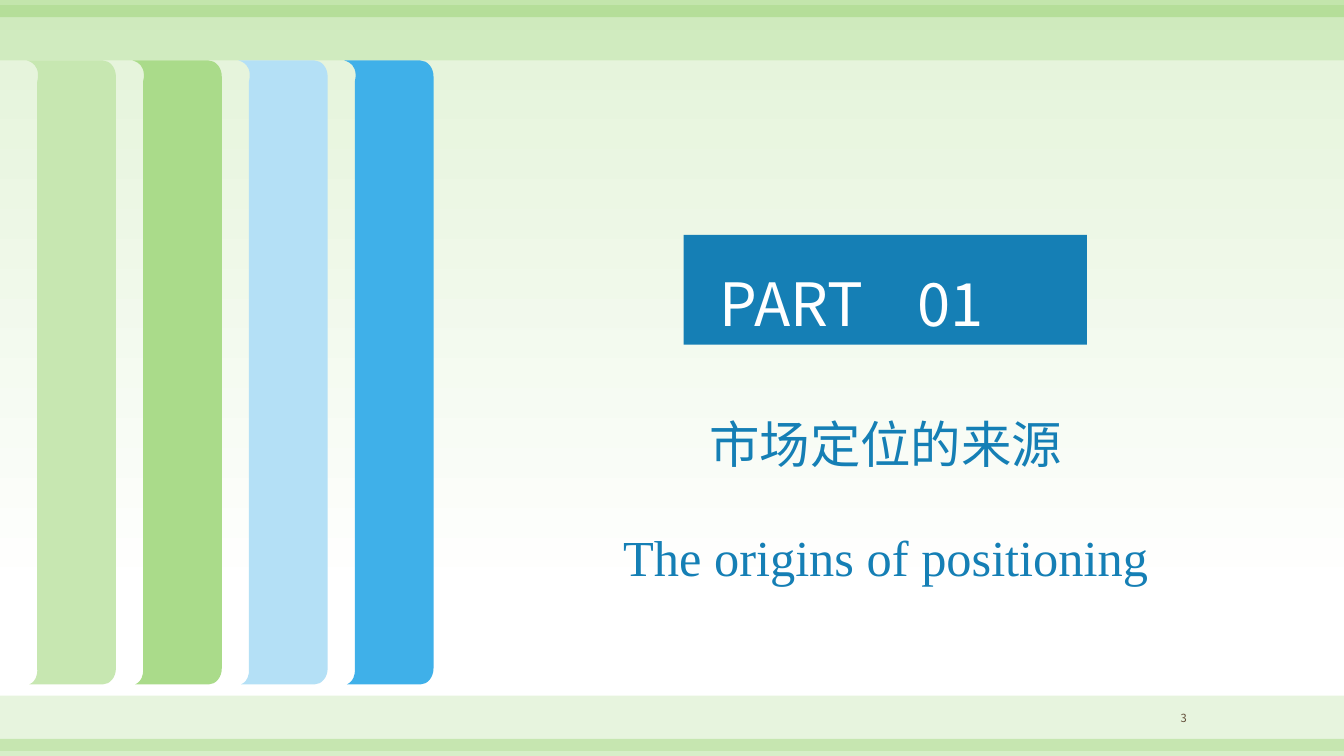
from pptx import Presentation
from pptx.dml.color import RGBColor
from pptx.enum.shapes import MSO_SHAPE as Shape
from pptx.enum.text import MSO_ANCHOR as Anchor, PP_ALIGN as Align
from pptx.oxml.ns import qn
from pptx.util import Inches, Pt
from lxml.etree import SubElement

W, H = 13.33, 7.5
SANS, SERIF = "Noto Sans CJK SC", "Times New Roman"
COLORS = {
    "sky": "E3F3D8", "white": "FFFFFF", "band": "72C23C", "blue": "157FB5", "brown": "624D38",
    "ribbons": ["C7E7B1", "AADB8A", "B4E0F6", "3FB0E9"],
}


def rgb(name):
    """Return the named palette colour."""
    return RGBColor.from_string(COLORS[name])


def paint(sp, color):
    """Give a shape a plain fill without line or shadow."""
    sp.fill.solid()
    sp.fill.fore_color.rgb = color
    sp.line.fill.background()
    sp.shadow.inherit = False


def add_rect(s, box, color):
    """Add a plain rectangle in a box of inches."""
    sp = s.shapes.add_shape(Shape.RECTANGLE, *map(Inches, box))
    paint(sp, rgb(color))
    return sp


def add_text(s, box, anchor=Anchor.TOP):
    """Add a wrapping text box and return its frame."""
    tf = s.shapes.add_textbox(*map(Inches, box)).text_frame
    tf.word_wrap = True
    tf.vertical_anchor = anchor
    return tf


def write(p, text, size, color, font=SANS, align=Align.LEFT):
    """Fill a paragraph with one formatted run."""
    p.text = text
    p.alignment = align
    r = p.runs[0]
    r.font.size, r.font.name = Pt(size), font
    r.font.color.rgb = rgb(color)
    SubElement(r.font._element, qn("a:ea"), typeface=font)


def add_background(s):
    """Fade the slide from pale green down to white."""
    fill = s.background.fill
    fill.gradient()
    fill.gradient_angle = 270
    for stop, color, position in zip(fill.gradient_stops, ("sky", "white"), (0, 0.79)):
        stop.color.rgb = rgb(color)
        stop.position = position


def add_bands(s, wide_top, edge_top):
    """Lay a wide and a narrow translucent band across the slide."""
    for top, height, alpha in ((wide_top, 0.55, 17), (edge_top, 0.17, 28)):
        sp = add_rect(s, (0, top, W, height), "band")
        color = sp.fill._xPr.find(qn("a:solidFill"))[0]
        SubElement(color, qn("a:alpha"), val=str(alpha * 1000))


def bend(segment, controls, left, top):
    """Turn a straight outline segment into a cubic curve."""
    cubic = segment.makeelement(qn("a:cubicBezTo"))
    for x, y in controls:
        SubElement(cubic, qn("a:pt"), x=str(Inches(x) - left), y=str(Inches(y) - top))
    segment.getparent().replace(segment, cubic)
    cubic.append(segment[0])


def add_ribbon(s, box, color):
    """Draw an upright ribbon with curled left and rounded right corners."""
    x, y, w, h = box
    corners = [
        ((0.11, 0.21), (0.16, -0.01), (-0.05, 0), (0.02, 0)),
        ((w - 0.13, 0), (w - 0.06, 0), (w, 0.07), (w, 0.16)),
        ((w, h - 0.16), (w, h - 0.07), (w - 0.06, h), (w - 0.13, h)),
        ((0.05, h), (-0.02, h), (0.12, h + 0.01), (0.11, h - 0.16)),
    ]
    corners = [[(x + px, y + py) for px, py in corner] for corner in corners]
    ends = [tuple(map(Inches, point)) for corner in corners for point in (corner[0], corner[-1])]
    builder = s.shapes.build_freeform(*ends[0])
    builder.add_line_segments(ends[1:], close=True)
    sp = builder.convert_to_shape()
    segments = list(sp._element.iter(qn("a:lnTo")))[::2]
    for segment, corner in zip(segments, corners):
        bend(segment, corner[1:3], sp.left, sp.top)
    paint(sp, RGBColor.from_string(color))


def add_ribbons(s, box, pitch):
    """Place one ribbon per colour at an equal pitch."""
    x, y, w, h = box
    for i, color in enumerate(COLORS["ribbons"]):
        add_ribbon(s, (x + i * pitch, y, w, h), color)


def add_part_label(s, box):
    """Add the blue label with the part number on a tab stop."""
    tf = add_rect(s, box, "blue").text_frame
    tf.vertical_anchor = Anchor.BOTTOM
    tf.margin_left = Inches(0.36)
    p = tf.paragraphs[0]
    write(p, "PART\t01", 42.6, "white")
    p.line_spacing = 0.9
    tabs = SubElement(p._p.get_or_add_pPr(), qn("a:tabLst"))
    SubElement(tabs, qn("a:tab"), pos=str(Inches(1.96)), algn="l")


def add_heading(s, box):
    """Add the section name in both languages."""
    tf = add_text(s, box)
    lines = (("市场定位的来源", SANS, 12), ("The origins of positioning", SERIF, 46))
    for i, (text, font, before) in enumerate(lines):
        p = tf.add_paragraph() if i else tf.paragraphs[0]
        write(p, text, 36, "blue", font, Align.CENTER)
        p.line_spacing = 0.8
        p.space_before = Pt(before)


def add_page_number(s, box):
    """Add the page number."""
    tf = add_text(s, box, Anchor.MIDDLE)
    write(tf.paragraphs[0], "3", 8, "brown", align=Align.RIGHT)


def build_section(prs):
    """Build the section slide."""
    s = prs.slides.add_slide(prs.slide_layouts[6])
    add_background(s)
    add_bands(s, 6.9, H - 0.17)
    add_bands(s, 0.05, 0)
    add_part_label(s, (6.78, 2.33, 4, 1.09))
    add_heading(s, (4.91, 4.17, 7.75, 1.8))
    add_ribbons(s, (0.26, 0.6, 0.89, 6.19), 1.05)
    add_page_number(s, (11.17, 6.99, 0.7, 0.26))


def main():
    """Create and save the presentation."""
    prs = Presentation()
    prs.slide_width, prs.slide_height = Inches(W), Inches(H)
    build_section(prs)
    prs.save("out.pptx")


if __name__ == "__main__":
    main()
